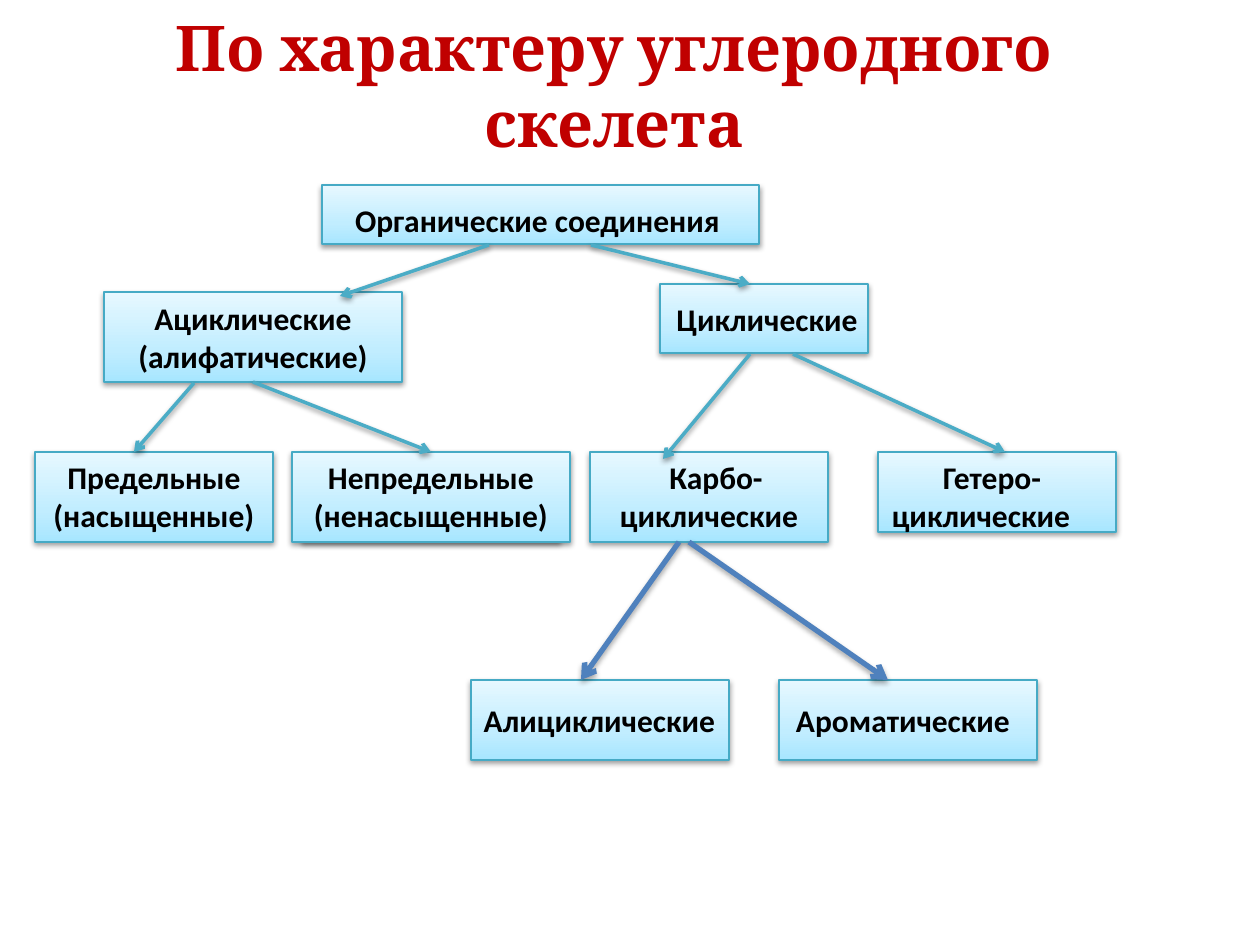
"""Builds a slide that classifies organic compounds by carbon skeleton."""
import copy
import dataclasses

import pptx
import pptx.dml.color
import pptx.enum.shapes
import pptx.enum.text
import pptx.oxml
import pptx.oxml.ns
import pptx.util

PX = 914400 / 126
qn = pptx.oxml.ns.qn
ALIGN = pptx.enum.text.PP_ALIGN
ANCHOR = pptx.enum.text.MSO_ANCHOR


@dataclasses.dataclass
class Theme:
    heading: str = "Cambria"
    body: str = "Calibri"
    title_size: int = 36
    body_size: int = 18
    title: str = "C00000"
    text: str = "000000"
    border: str = "46AAC5"
    branch: str = "4BACC6"
    thick_branch: str = "4F81BD"
    gradient: tuple = ((0, "A7E6FF"), (0.35, "C1EDFF"), (1, "E7F8FF"))


theme = Theme()
rgb = pptx.dml.color.RGBColor.from_string


def emu(*lengths):
    return [round(n * PX) for n in lengths]


def add_shadow(sp, dist, alpha):
    sp._element.spPr.append(pptx.oxml.parse_xml(
        f'<a:effectLst {pptx.oxml.ns.nsdecls("a")}>'
        f'<a:outerShdw blurRad="40000" dist="{dist}" dir="5400000" rotWithShape="0">'
        f'<a:srgbClr val="000000"><a:alpha val="{alpha}"/></a:srgbClr>'
        '</a:outerShdw></a:effectLst>'))


prs = pptx.Presentation()
prs.slide_width, prs.slide_height = emu(1260, 945)
s = prs.slides.add_slide(prs.slide_layouts[6])

boxes = {
    "unsaturated_back": (302, 452, 258, 90),
    "aromatic": (779, 680, 258, 80),
    "alicyclic": (471, 680, 258, 80),
    "heterocyclic": (878, 452, 238, 80),
    "carbocyclic": (590, 452, 238, 90),
    "saturated": (35, 452, 238, 90),
    "cyclic": (660, 284, 208, 69),
    "acyclic": (104, 292, 298, 90),
    "root": (322, 185, 437, 59),
    "unsaturated": (292, 452, 278, 90),
}
shapes = {}
for name, place in boxes.items():
    sp = s.shapes.add_shape(pptx.enum.shapes.MSO_SHAPE.RECTANGLE, *emu(*place))
    sp.fill.gradient()
    sp.fill.gradient_angle = 90
    stops = sp._element.spPr.find(".//" + qn("a:gsLst"))
    stops.insert(1, copy.deepcopy(stops[0]))
    for stop, (position, color) in zip(sp.fill.gradient_stops, theme.gradient):
        stop.position = position
        stop.color.rgb = rgb(color)
    sp.line.color.rgb = rgb(theme.border)
    sp.line.width = pptx.util.Pt(0.75)
    add_shadow(sp, 20000, 38000)
    shapes[name] = sp

heading = (theme.heading, theme.title_size, theme.title)
body = (theme.body, theme.body_size, theme.text)
labels = [
    ((64, 44, 1101, 81), ["По характеру углеродного скелета"], heading, ALIGN.CENTER, ANCHOR.MIDDLE, 0),
    ((329, 195, 417, 50), ["Органические соединения"], body, ALIGN.CENTER, ANCHOR.TOP, 0),
    ((600, 294, 270, 50), ["Циклические"], body, ALIGN.RIGHT, ANCHOR.TOP, 0),
    ((35, 452, 238, 90), ["Предельные", "(насыщенные)"], body, ALIGN.CENTER, ANCHOR.TOP, 0),
    ((600, 452, 218, 90), ["Карбо-", "циклические"], body, ALIGN.CENTER, ANCHOR.TOP, 14),
    ((857, 452, 248, 90), ["Гетеро-", "циклические"], body, ALIGN.CENTER, ANCHOR.TOP, 22),
    ((461, 695, 277, 50), ["Алициклические"], body, ALIGN.CENTER, ANCHOR.TOP, 0),
    ((769, 695, 268, 50), ["Ароматические"], body, ALIGN.CENTER, ANCHOR.TOP, 0),
    ("acyclic", ["Ациклические", "(алифатические)"], body, ALIGN.CENTER, ANCHOR.MIDDLE, 0),
    ("unsaturated", ["Непредельные", "(ненасыщенные)"], body, ALIGN.CENTER, ANCHOR.TOP, 0),
]
for place, lines, (font, size, color), align, anchor, indent in labels:
    sp = shapes[place] if place in shapes else s.shapes.add_textbox(*emu(*place))
    tf = sp.text_frame
    tf.word_wrap = True
    tf.vertical_anchor = anchor
    tf.text = "\n".join(lines)
    for p in tf.paragraphs:
        p.alignment = align
        p.font.name = font
        p.font.size = pptx.util.Pt(size)
        p.font.bold = True
        p.font.color.rgb = rgb(color)
    if indent:
        tf.paragraphs[0]._p.get_or_add_pPr().set("marL", str(emu(indent)[0]))

thin = (theme.branch, 2, 20000, 38000)
thick = (theme.thick_branch, 3, 23000, 35000)
arrows = [
    ((591, 245, 750, 284), thin),
    ((489, 245, 340, 296), thin),
    ((194, 383, 134, 452), thin),
    ((253, 382, 431, 452), thin),
    ((750, 354, 663, 459), thin),
    ((793, 354, 1005, 452), thin),
    ((689, 542, 888, 680), thick),
    ((679, 542, 581, 680), thick),
]
joins = {(253, 382, 431, 452): ("acyclic", "unsaturated")}
for ends, (color, width, dist, alpha) in arrows:
    line = s.shapes.add_connector(pptx.enum.shapes.MSO_CONNECTOR.STRAIGHT, *emu(*ends))
    if ends in joins:
        start, end = joins[ends]
        line.begin_connect(shapes[start], 2)
        line.end_connect(shapes[end], 0)
    line.line.color.rgb = rgb(color)
    line.line.width = pptx.util.Pt(width)
    tail = pptx.oxml.parse_xml(f'<a:tailEnd {pptx.oxml.ns.nsdecls("a")} type="arrow"/>')
    line._element.spPr.find(qn("a:ln")).append(tail)
    add_shadow(line, dist, alpha)

prs.save("out.pptx")
